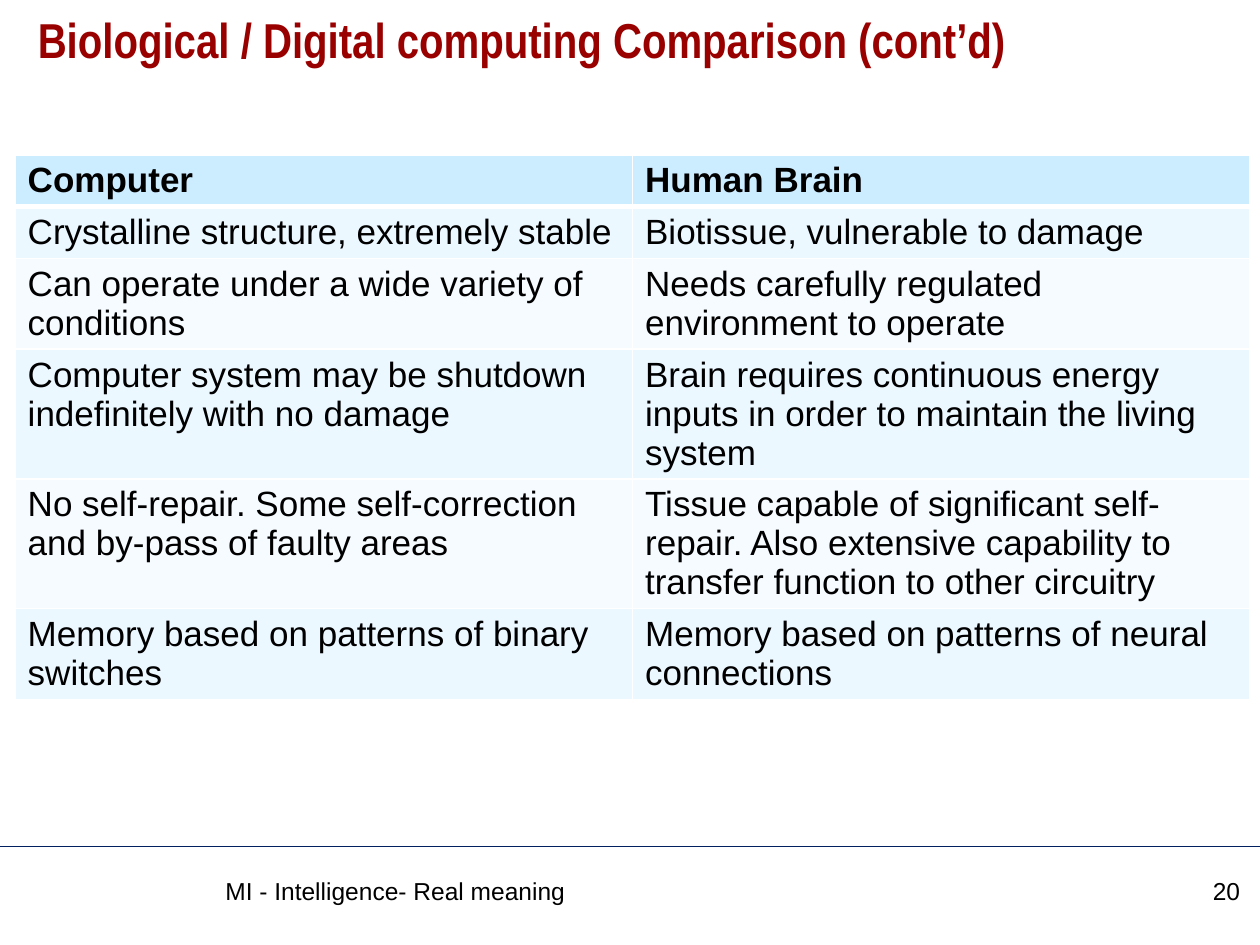
from dataclasses import dataclass

from lxml.etree import SubElement
from pptx import Presentation
from pptx.dml.color import RGBColor as Color
from pptx.enum.shapes import MSO_CONNECTOR as Connector
from pptx.enum.text import MSO_ANCHOR as Anchor, PP_ALIGN as Align
from pptx.oxml.ns import qn
from pptx.util import Inches, Pt


@dataclass(frozen=True)
class Theme:
    title_color: str = "990000"
    text_color: str = "000000"
    rule_color: str = "002060"
    border_color: str = "FFFFFF"
    header_fill: str = "CCECFF"
    band_fills: tuple = ("ECF8FF", "F6FBFF")
    title_font: str = "Arial Narrow"
    body_font: str = "Arial"
    title_size: int = 28
    table_size: int = 20
    footer_size: int = 14


THEME = Theme()
ROWS = [
    ("Computer", "Human Brain"),
    ("Crystalline structure, extremely stable", "Biotissue, vulnerable to damage"),
    ("Can operate under a wide variety of conditions",
     "Needs carefully regulated environment to operate"),
    ("Computer system may be shutdown indefinitely with no damage",
     "Brain requires continuous energy inputs in order to maintain the living system"),
    ("No self-repair. Some self-correction and by-pass of faulty areas",
     "Tissue capable of significant self-repair. Also extensive capability "
     "to transfer function to other circuitry"),
    ("Memory based on patterns of binary switches",
     "Memory based on patterns of neural connections"),
]


def write_text(frame, text, size, font=THEME.body_font, color=THEME.text_color,
               bold=False, align=Align.LEFT, spacing=1.0):
    frame.word_wrap = True
    para = frame.paragraphs[0]
    para.alignment = align
    para.line_spacing = spacing
    span = para.add_run()
    span.text = text
    span.font.name = font
    span.font.size = Pt(size)
    span.font.bold = bold
    span.font.color.rgb = Color.from_string(color)


def add_title(page, box, text):
    title = page.shapes.title
    title.left, title.top, title.width, title.height = map(Inches, box)
    title.text_frame.vertical_anchor = Anchor.TOP
    write_text(title.text_frame, text, THEME.title_size, font=THEME.title_font,
               color=THEME.title_color, bold=True, spacing=0.9)


def set_borders(cell, bottom_width, top_width):
    props = cell._tc.get_or_add_tcPr()
    widths = {"a:lnL": 1, "a:lnR": 1, "a:lnT": top_width, "a:lnB": bottom_width}
    for position, (tag, width) in enumerate(widths.items()):
        line = SubElement(props, qn(tag), w=str(Pt(width)))
        fill = SubElement(line, qn("a:solidFill"))
        SubElement(fill, qn("a:srgbClr"), val=THEME.border_color)
        props.insert(position, line)


def add_comparison(page, box, rows):
    left, top, width, height = map(Inches, box)
    table = page.shapes.add_table(len(rows), len(rows[0]), left, top, width, height).table
    for row_index, texts in enumerate(rows):
        header = row_index == 0
        fill = THEME.header_fill if header else THEME.band_fills[(row_index - 1) % 2]
        for column_index, text in enumerate(texts):
            cell = table.cell(row_index, column_index)
            cell.fill.solid()
            cell.fill.fore_color.rgb = Color.from_string(fill)
            set_borders(cell, bottom_width=3 if header else 1,
                        top_width=3 if row_index == 1 else 1)
            write_text(cell.text_frame, text, THEME.table_size, bold=header)


def add_footer(page, box, text, number):
    left, top, width, height = box
    rule = page.shapes.add_connector(Connector.STRAIGHT, Inches(left), Inches(top),
                                     Inches(left + width), Inches(top))
    rule.line.color.rgb = Color.from_string(THEME.rule_color)
    rule.line.width = Pt(0.75)
    SubElement(rule._element.spPr, qn("a:effectLst"))
    labels = [(text, 1.69, 7.21, Align.LEFT), (number, 9.02, 0.92, Align.RIGHT)]
    for label, offset, label_width, align in labels:
        label_box = page.shapes.add_textbox(Inches(left + offset), Inches(top + 0.18),
                                            Inches(label_width), Inches(height - 0.33))
        write_text(label_box.text_frame, label, THEME.footer_size, align=align)


def main():
    deck = Presentation()
    deck.slide_width, deck.slide_height = Inches(10), Inches(7.5)
    page = deck.slides.add_slide(deck.slide_layouts[5])
    add_title(page, (0.2, 0.08, 9.61, 0.83),
              "Biological / Digital computing Comparison (cont’d)")
    add_comparison(page, (0.12, 1.23, 9.8, 2.46), ROWS)
    add_footer(page, (0, 6.72, 10, 0.78), "MI - Intelligence- Real meaning", "20")
    deck.save("out.pptx")


if __name__ == "__main__":
    main()
